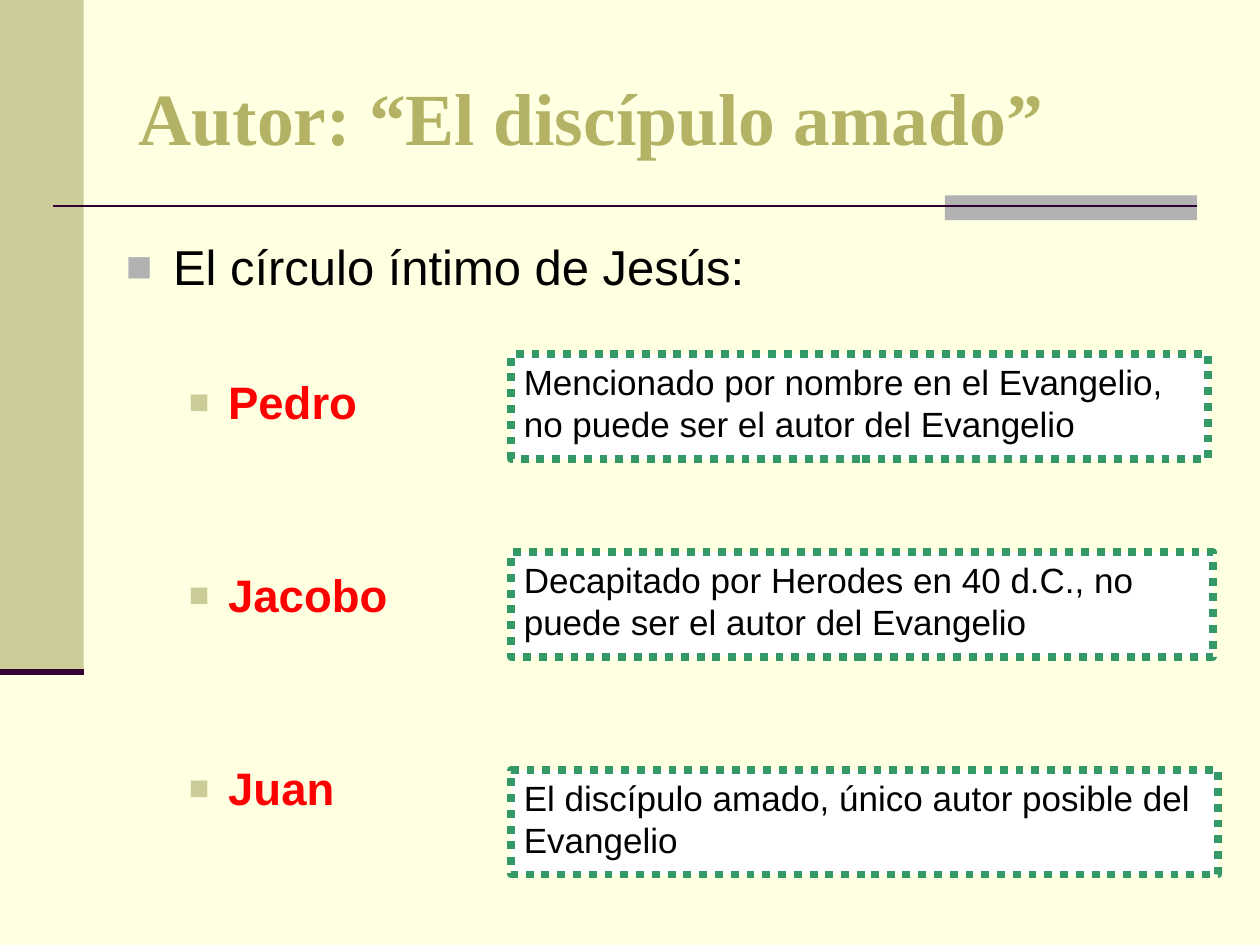
"""Builds a slide on the authorship of the Gospel and the inner circle of Jesus."""
import pptx
import pptx.util
import pptx.dml.color
import pptx.enum.dml
import pptx.enum.shapes
import pptx.enum.text
import pptx.oxml.ns
from lxml import etree
from pptx.util import Cm, Pt

TITLE = "Autor: “El discípulo amado”"
HEADING = "El círculo íntimo de Jesús:"
DISCIPLES = [
    ("Pedro", 45, "Mencionado por nombre en el Evangelio, no puede ser el autor del Evangelio", 7.14, 14.05),
    ("Jacobo", 79, "Decapitado por Herodes en 40 d.C., no puede ser el autor del Evangelio", 11.13, 14.15),
    ("Juan", 79, "El discípulo amado, único autor posible del Evangelio", 15.52, 14.25),
]
THEME = {
    "paper": "FFFFE1", "sand": "CCCC99", "gray": "B2B2B2", "plum": "330033",
    "title": "B4B264", "text": "000000", "name": "FF0000", "white": "FFFFFF", "dots": "339966",
    "title_font": "Times New Roman", "body_font": "Arial",
    "title_size": 42, "heading_size": 28, "name_size": 26, "note_size": 20,
}
NOTE_LEFT, NOTE_HEIGHT = 10.31, 2.11


def color(name):
    return pptx.dml.color.RGBColor.from_string(THEME[name])


def style(paragraph, size, ink, family="body_font", bold=False):
    font = paragraph.font
    font.name, font.size, font.bold = THEME[family], Pt(THEME[size]), bold
    font.color.rgb = color(ink)


def add_bullet(paragraph, ink, percent, margin, hanging):
    properties = paragraph._p.get_or_add_pPr()
    properties.set("marL", str(Cm(margin)))
    properties.set("indent", str(-Cm(hanging)))
    qn = pptx.oxml.ns.qn
    bullet_color = etree.SubElement(properties, qn("a:buClr"))
    etree.SubElement(bullet_color, qn("a:srgbClr"), val=THEME[ink])
    etree.SubElement(properties, qn("a:buSzPct"), val=str(percent * 1000))
    etree.SubElement(properties, qn("a:buFont"), typeface=THEME["body_font"])
    etree.SubElement(properties, qn("a:buChar"), char="■")


def add_block(slide, fill, left, top, width, height):
    block = slide.shapes.add_shape(
        pptx.enum.shapes.MSO_SHAPE.RECTANGLE, Cm(left), Cm(top), Cm(width), Cm(height))
    block.shadow.inherit = False
    block.fill.solid()
    block.fill.fore_color.rgb = color(fill)
    block.line.fill.background()
    return block


def add_rule(slide, left, right, y, weight):
    rule = slide.shapes.add_connector(
        pptx.enum.shapes.MSO_CONNECTOR.STRAIGHT, Cm(left), Cm(y), Cm(right), Cm(y))
    rule.line.color.rgb = color("plum")
    rule.line.width = Pt(weight)
    etree.SubElement(rule._element.spPr, pptx.oxml.ns.qn("a:effectLst"))


def add_title(slide):
    title = slide.shapes.title
    title.left, title.top, title.width, title.height = Cm(2.54), Cm(0.76), Cm(21.59), Cm(3.18)
    title.text_frame.text = TITLE
    title.text_frame.vertical_anchor = pptx.enum.text.MSO_ANCHOR.MIDDLE
    paragraph = title.text_frame.paragraphs[0]
    paragraph.alignment = pptx.enum.text.PP_ALIGN.LEFT
    style(paragraph, "title_size", "title", "title_font", True)


def add_circle(slide):
    frame = slide.shapes.add_textbox(Cm(2.29), Cm(4.65), Cm(13.21), Cm(12.45)).text_frame
    frame.word_wrap = True
    heading = frame.paragraphs[0]
    heading.text = HEADING
    add_bullet(heading, "gray", 90, 0.95, 0.95)
    style(heading, "heading_size", "text")
    for name, gap, *_ in DISCIPLES:
        paragraph = frame.add_paragraph()
        paragraph.text = name
        paragraph.level = 1
        paragraph.space_before = Pt(gap)
        add_bullet(paragraph, "sand", 75, 2.06, 0.79)
        style(paragraph, "name_size", "name", bold=True)


def add_note(slide, text, top, width):
    note = add_block(slide, "white", NOTE_LEFT, top, width, NOTE_HEIGHT)
    note.line.color.rgb = color("dots")
    note.line.width = Pt(4.5)
    note.line.dash_style = pptx.enum.dml.MSO_LINE.ROUND_DOT
    frame = note.text_frame
    frame.word_wrap = True
    frame.vertical_anchor = pptx.enum.text.MSO_ANCHOR.TOP
    frame.text = text
    frame.paragraphs[0].alignment = pptx.enum.text.PP_ALIGN.LEFT
    style(frame.paragraphs[0], "note_size", "text")


def main():
    deck = pptx.Presentation()
    deck.slide_width, deck.slide_height = Cm(25.4), Cm(19.05)
    slide = deck.slides.add_slide(deck.slide_layouts[5])
    slide.background.fill.solid()
    slide.background.fill.fore_color.rgb = color("paper")
    add_block(slide, "sand", 0, 0, 1.69, 13.55)
    add_block(slide, "gray", 19.05, 3.94, 5.08, 0.5)
    add_rule(slide, 1.06, 24.13, 4.15, 1.5)
    add_rule(slide, 0, 1.69, 13.55, 3.5)
    add_title(slide)
    add_circle(slide)
    for _, _, text, top, width in DISCIPLES:
        add_note(slide, text, top, width)
    deck.save("out.pptx")


if __name__ == "__main__":
    main()
